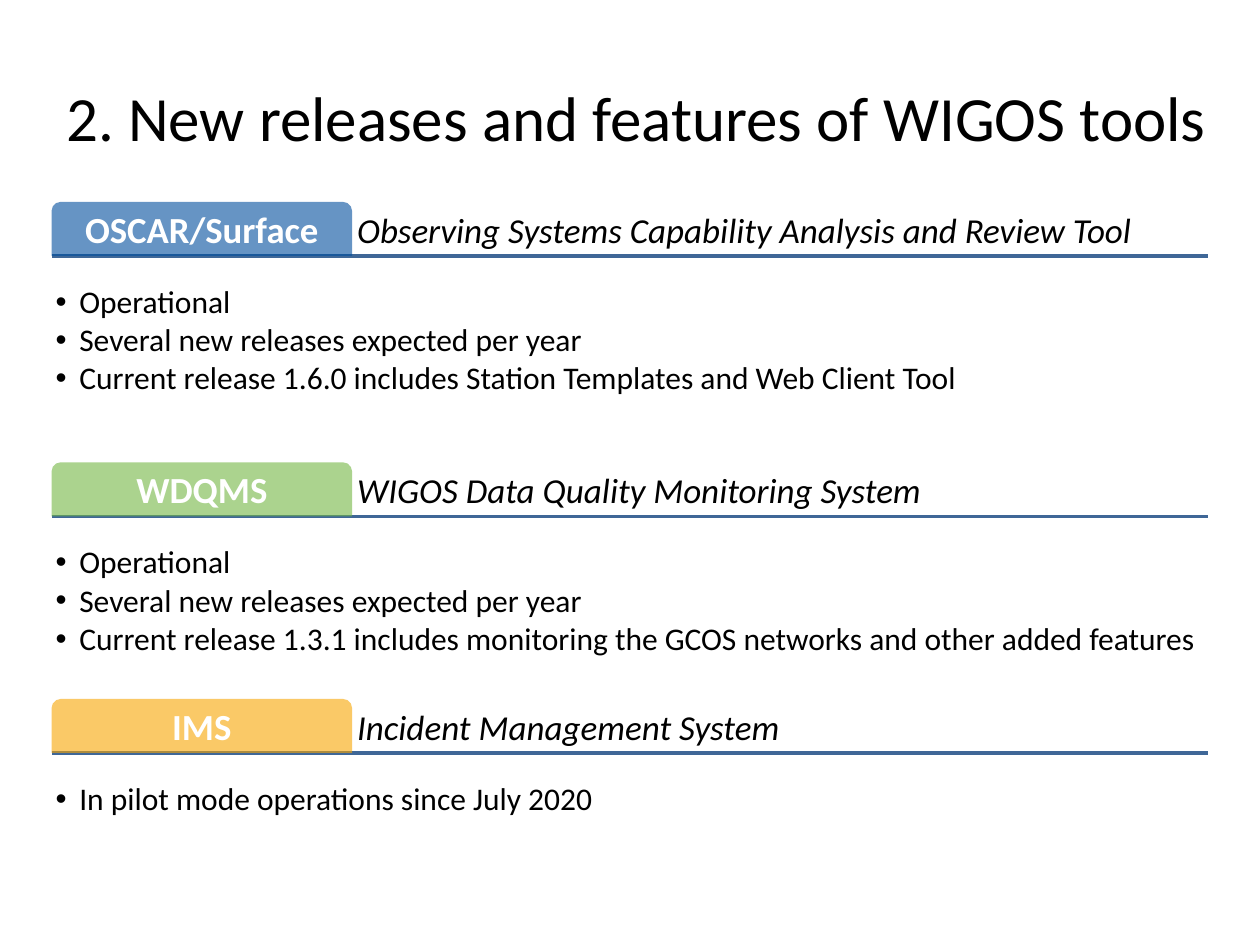
from lxml import etree
from pptx import Presentation
from pptx.dml.color import RGBColor
from pptx.enum.shapes import MSO_CONNECTOR, MSO_SHAPE
from pptx.enum.text import MSO_ANCHOR, PP_ALIGN
from pptx.oxml.ns import qn
from pptx.util import Cm, Pt

STRAIGHT = MSO_CONNECTOR.STRAIGHT
TAB = MSO_SHAPE.ROUND_2_SAME_RECTANGLE
TOP, MIDDLE, BOTTOM = MSO_ANCHOR.TOP, MSO_ANCHOR.MIDDLE, MSO_ANCHOR.BOTTOM
LEFT, CENTER = PP_ALIGN.LEFT, PP_ALIGN.CENTER

COLORS = {
    "text": "000000", "light": "FFFFFF", "rule": "3F6797",
    "blue": "004E9D", "green": "74B743", "amber": "F8A602",
}

EDGE, WIDTH = 1.04, 23.32
TAB_W, TAB_H = 6.06, 1.09
BODY_GAP = 0.53

# rule height, tab colour, name, full name, body height, points
TOOLS = [
    (5.16, "blue", "OSCAR/Surface",
     "Observing Systems Capability Analysis and Review Tool", 3.55,
     ["Operational", "Several new releases expected per year",
      "Current release 1.6.0 includes Station Templates and Web Client Tool"]),
    (10.41, "green", "WDQMS", "WIGOS Data Quality Monitoring System", 3.07,
     ["Operational", "Several new releases expected per year",
      "Current release 1.3.1 includes monitoring the GCOS networks "
      "and other added features"]),
    (15.18, "amber", "IMS", "Incident Management System", 1.67,
     ["In pilot mode operations since July 2020"]),
]


def rgb(name):
    return RGBColor.from_string(COLORS[name])


def write(frame, lines, size, color="text", bold=False, italic=False,
          align=LEFT, anchor=TOP, inset=0.1, top=None, spacing=0.9,
          after=0, bullet=False):
    frame.word_wrap = True
    frame.vertical_anchor = anchor
    frame.margin_left = frame.margin_right = frame.margin_bottom = Cm(inset)
    frame.margin_top = Cm(inset if top is None else top)
    for i, line in enumerate(lines):
        para = frame.paragraphs[0] if i == 0 else frame.add_paragraph()
        para.alignment = align
        para.line_spacing = spacing
        para.space_after = Pt(after)
        if bullet:
            add_bullet(para)
        run = para.add_run()
        run.text = line
        font = run.font
        font.name, font.size = "Calibri", Pt(size)
        font.bold, font.italic = bold, italic
        font.color.rgb = rgb(color)


def add_bullet(para):
    props = para._p.get_or_add_pPr()
    props.set("marL", str(Cm(0.48)))
    props.set("indent", str(-Cm(0.48)))
    etree.SubElement(props, qn("a:buFont"), typeface="Arial")
    etree.SubElement(props, qn("a:buChar"), char="•")


class Deck:
    def __init__(self):
        self.prs = Presentation()
        self.prs.slide_width, self.prs.slide_height = Cm(25.4), Cm(19.05)
        self.slide = self.prs.slides.add_slide(self.prs.slide_layouts[6])

    def text(self, x, y, w, h, lines, size, **style):
        box = self.slide.shapes.add_textbox(Cm(x), Cm(y), Cm(w), Cm(h))
        write(box.text_frame, lines, size, **style)

    def rule(self, y):
        line = self.slide.shapes.add_connector(
            STRAIGHT, Cm(EDGE), Cm(y), Cm(EDGE + WIDTH), Cm(y))
        line.line.color.rgb = rgb("rule")
        line.line.width = Pt(2)
        etree.SubElement(line._element.spPr, qn("a:effectLst"))

    def tab(self, y, name, color):
        tab = self.slide.shapes.add_shape(
            TAB, Cm(EDGE), Cm(y), Cm(TAB_W), Cm(TAB_H))
        tab.shadow.inherit = False
        tab.adjustments[0] = 0.17
        tab.line.fill.background()
        tab.fill.solid()
        tab.fill.fore_color.rgb = rgb(color)
        tint = tab._element.spPr.find(".//" + qn("a:srgbClr"))
        etree.SubElement(tint, qn("a:alpha"), val="60000")
        write(tab.text_frame, [name], 21, color="light", bold=True,
              align=CENTER, anchor=MIDDLE, top=0.15)

    def tool(self, y, color, name, full, height, points):
        """Draw one tool: its rule, tab, full name and list of points."""
        top = y - TAB_H
        self.rule(y)
        self.text(EDGE + TAB_W, top, WIDTH - TAB_W, TAB_H, [full], 20,
                  italic=True, anchor=BOTTOM)
        self.tab(top, name, color)
        self.text(EDGE, y + BODY_GAP, WIDTH, height, points, 18,
                  inset=0.08, after=2.4, bullet=True)


def main():
    deck = Deck()
    deck.text(1.02, 0.76, 23.62, 3.18,
              ["2. New releases and features of WIGOS tools"], 36,
              align=CENTER, anchor=MIDDLE, inset=0.2, spacing=1.0)
    for tool in TOOLS:
        deck.tool(*tool)
    deck.prs.save("out.pptx")


if __name__ == "__main__":
    main()
